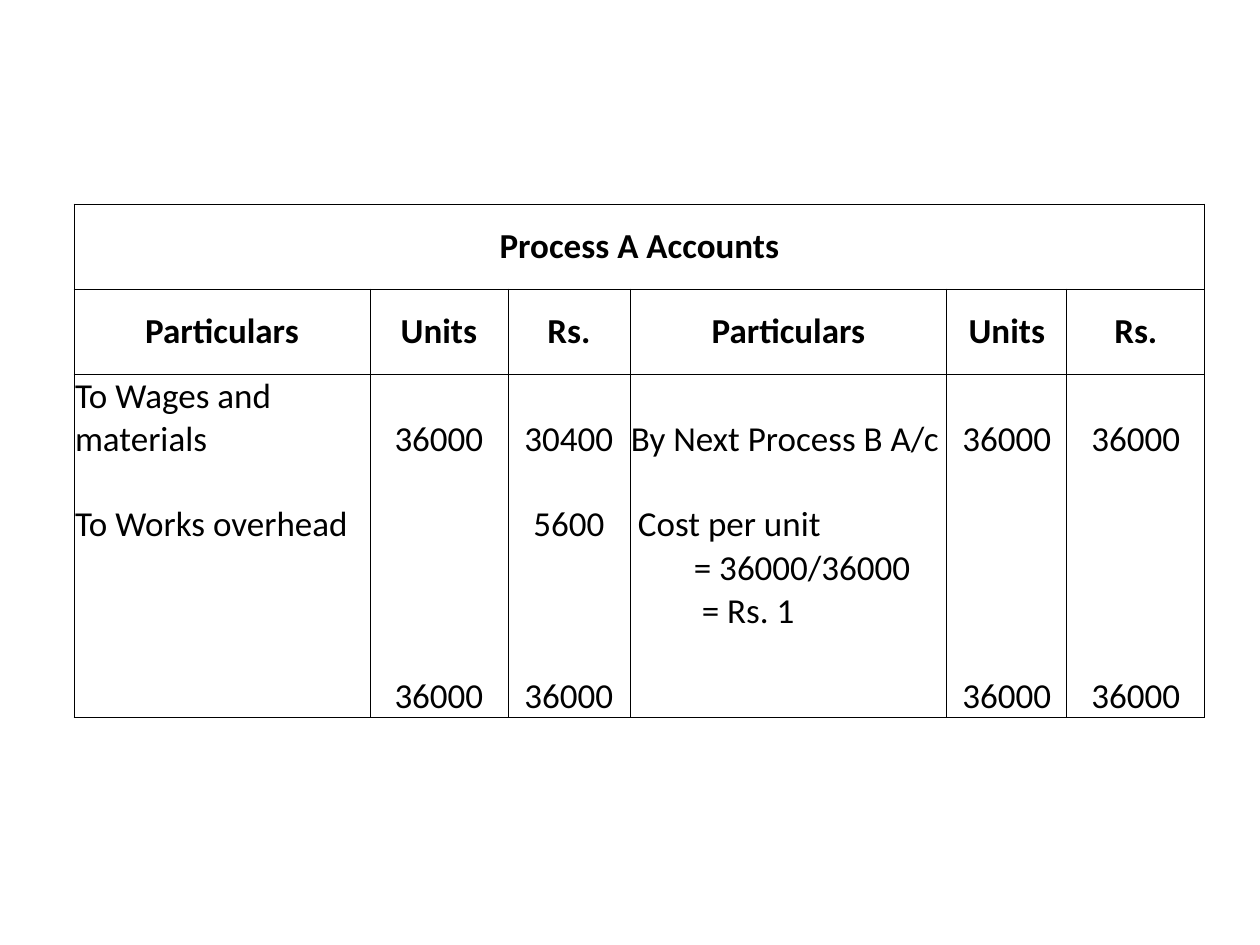
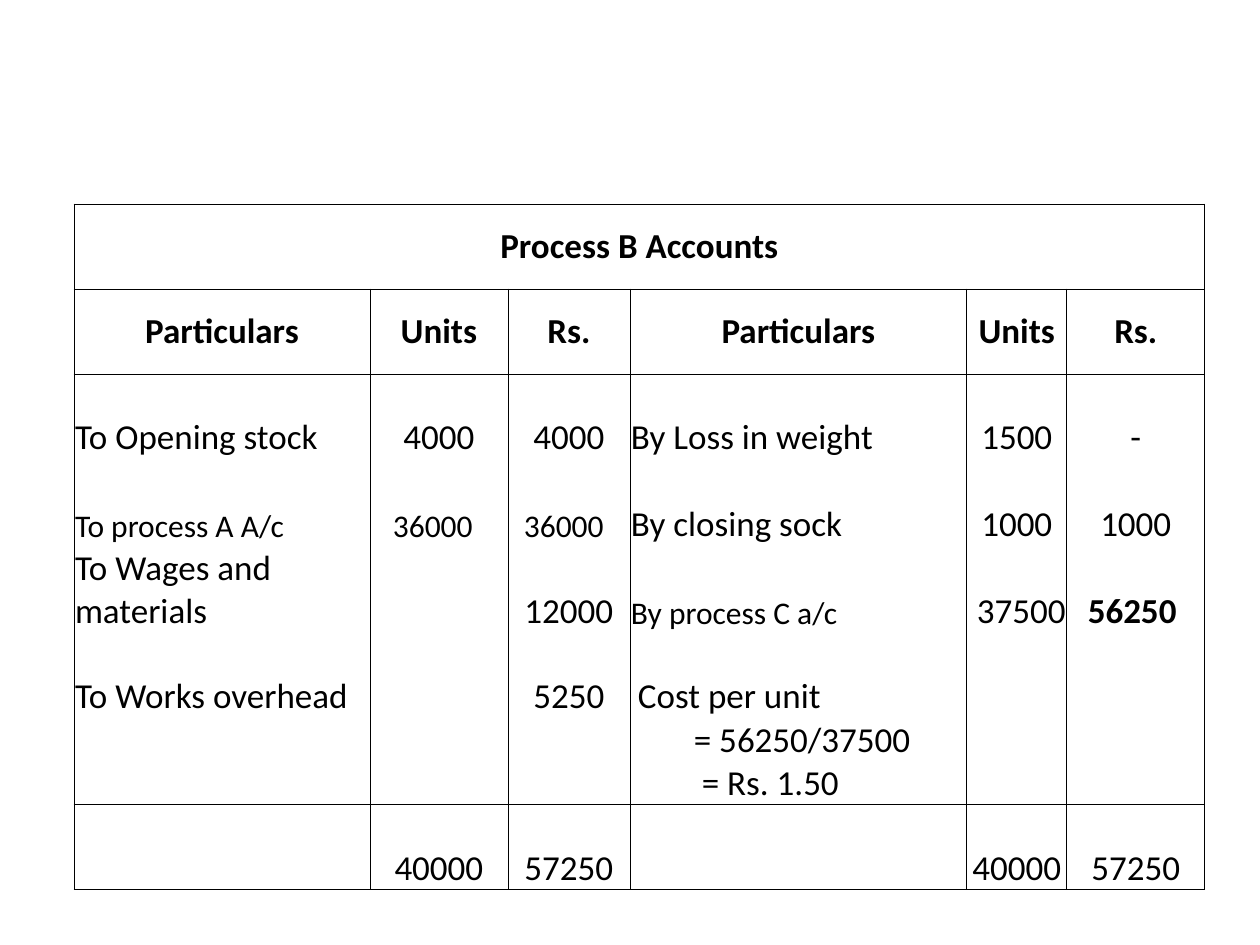
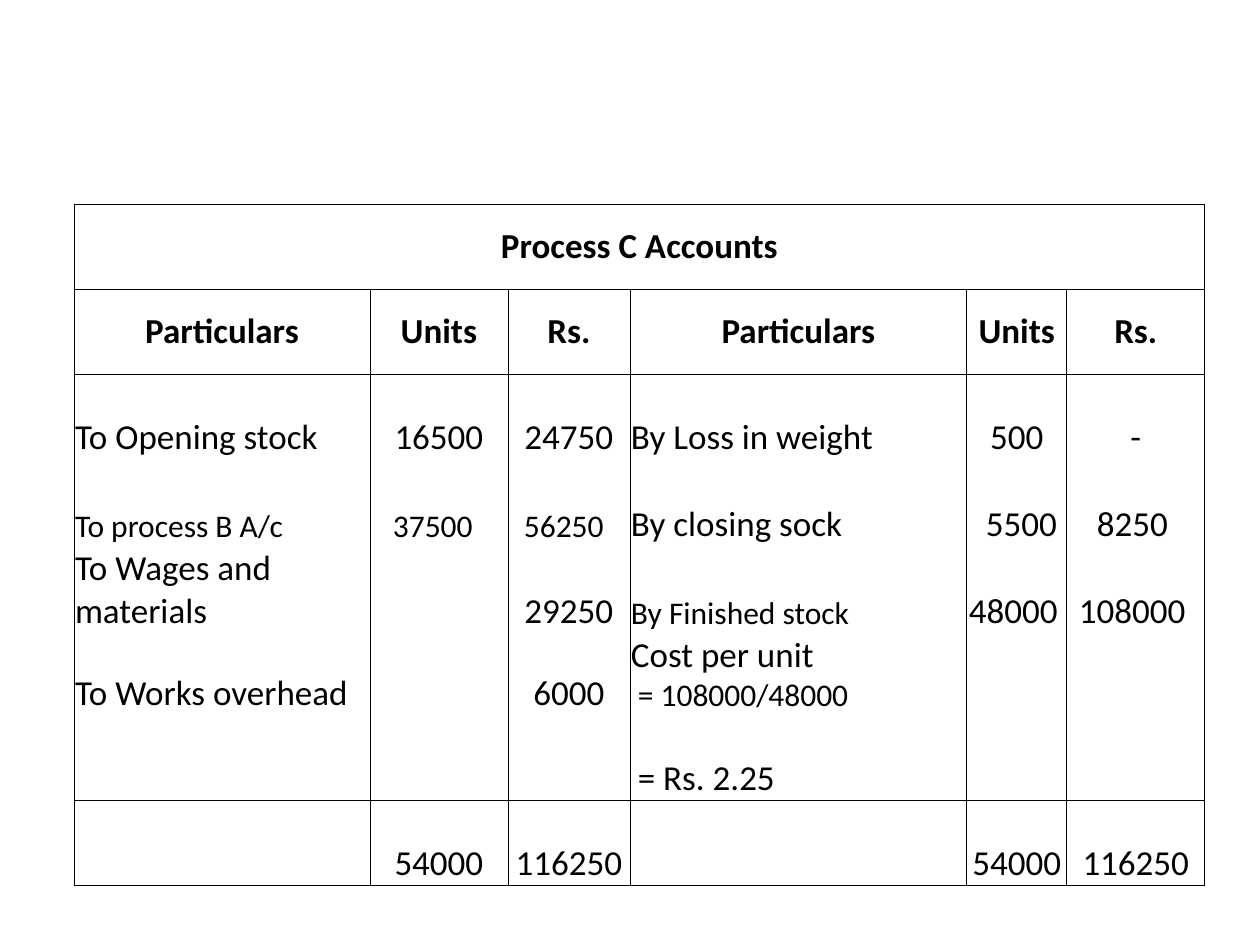
import collections

import pptx
import pptx.dml.color
import pptx.enum.text
import pptx.oxml
import pptx.oxml.ns
import pptx.util

Theme = collections.namedtuple("Theme", "ink paper font size small rule")
THEME = Theme(ink="000000", paper="FFFFFF", font="Calibri", size=20, small=18, rule=0.5)
Entry = collections.namedtuple("Entry", "text size indent bold", defaults=(THEME.size, None, False))
Ledger = collections.namedtuple("Ledger", "title widths heights rules entries")

HEADINGS = ["Particulars", "Units", "Rs."] * 2
PARTICULARS = (0, 3)
LEFT, TOP = 74, 204
HEADER_HEIGHTS = [85, 85]


def px(length):
    return pptx.util.Emu(round(length * 914400 / 126))


def draw_border(cell, side, visible):
    border = pptx.oxml.parse_xml(
        f'<a:{side} {pptx.oxml.ns.nsdecls("a")} w="{int(THEME.rule * 12700)}">'
        + (f'<a:solidFill><a:srgbClr val="{THEME.ink}"/></a:solidFill>' if visible else "<a:noFill/>")
        + f"</a:{side}>"
    )
    cell._tc.get_or_add_tcPr().append(border)


ledgers = [
    Ledger(
        "Process A Accounts",
        [296, 138, 122, 317, 120, 138],
        HEADER_HEIGHTS + [87, 85, 87, 85],
        {0, 1, 2, 6},
        [
            ["To Wages and materials", "36000", "30400", "By Next Process B A/c", "36000", "36000"],
            ["To Works overhead", "", "5600", Entry("Cost per unit", indent=7), "", ""],
            ["", "", "", [Entry("= 36000/36000", indent=63), Entry("= Rs. 1", indent=71)], "", ""],
            ["", "36000", "36000", "", "36000", "36000"],
        ],
    ),
    Ledger(
        "Process B Accounts",
        [296, 138, 122, 337, 100, 138],
        HEADER_HEIGHTS + [85, 87, 87, 85, 87, 85],
        {0, 1, 2, 7, 8},
        [
            ["To Opening stock", "4000", "4000", "By Loss in weight", "1500", "-"],
            [Entry("To process A A/c", THEME.small), Entry("36000", THEME.small, 22),
             Entry("36000", THEME.small, 15), "By closing sock", "1000", "1000"],
            ["To Wages and materials", "", "12000", Entry("By process C a/c", THEME.small),
             Entry("37500", indent=9), Entry("56250", indent=20, bold=True)],
            ["To Works overhead", "", "5250", Entry("Cost per unit", indent=7), "", ""],
            ["", "", "", [Entry("= 56250/37500", indent=63), Entry("= Rs. 1.50", indent=71)], "", ""],
            ["", "40000", "57250", "", "40000", "57250"],
        ],
    ),
    Ledger(
        "Process C Accounts",
        [296, 138, 122, 337, 100, 138],
        HEADER_HEIGHTS + [85, 87, 87, 82, 85, 85],
        {0, 1, 2, 7, 8},
        [
            ["To Opening stock", "16500", "24750", "By Loss in weight", "500", "-"],
            [Entry("To process B A/c", THEME.small), Entry("37500", THEME.small, 22),
             Entry("56250", THEME.small, 15), "By closing sock", Entry("5500", indent=18),
             Entry("8250", indent=29)],
            ["To Wages and materials", "", "29250", Entry("By Finished stock", THEME.small),
             Entry("48000", indent=1), Entry("108000", indent=11)],
            ["To Works overhead", "", "6000",
             [Entry("Cost per unit"), Entry("= 108000/48000", THEME.small, 7)], "", ""],
            ["", "", "", Entry("= Rs. 2.25", indent=7), "", ""],
            ["", "54000", "116250", "", "54000", "116250"],
        ],
    ),
]

deck = pptx.Presentation()
deck.slide_width, deck.slide_height = px(1260), px(945)

for ledger in ledgers:
    slide = deck.slides.add_slide(deck.slide_layouts[6])
    slide.background.fill.solid()
    slide.background.fill.fore_color.rgb = pptx.dml.color.RGBColor.from_string(THEME.paper)
    account = slide.shapes.add_table(
        len(ledger.heights), len(ledger.widths), px(LEFT), px(TOP),
        px(sum(ledger.widths)), px(sum(ledger.heights)),
    ).table
    account.first_row = account.horz_banding = False
    for column, width in zip(account.columns, ledger.widths):
        column.width = px(width)
    for row, height in zip(account.rows, ledger.heights):
        row.height = px(height)
    account.cell(0, 0).merge(account.cell(0, 5))

    for r, contents in enumerate([[ledger.title] + [""] * 5, HEADINGS] + ledger.entries):
        for c, content in enumerate(contents):
            cell = account.cell(r, c)
            is_header = r < 2
            draw_border(cell, "lnL", True)
            draw_border(cell, "lnR", True)
            draw_border(cell, "lnT", r in ledger.rules)
            draw_border(cell, "lnB", r + 1 in ledger.rules)
            cell.fill.background()
            cell.margin_left = cell.margin_right = cell.margin_top = px(1)
            cell.margin_bottom = 0
            anchor = pptx.enum.text.MSO_ANCHOR
            cell.vertical_anchor = anchor.MIDDLE if is_header else anchor.BOTTOM

            lines = content if isinstance(content, list) else [content]
            lines = [Entry(line) if isinstance(line, str) else line for line in lines]
            cell.text_frame.text = "\n".join(line.text for line in lines)
            for paragraph, line in zip(cell.text_frame.paragraphs, lines):
                if line.indent is not None:
                    paragraph._p.get_or_add_pPr().set("marL", str(px(line.indent)))
                elif is_header or c not in PARTICULARS:
                    paragraph.alignment = pptx.enum.text.PP_ALIGN.CENTER
                paragraph.font.size = pptx.util.Pt(line.size)
                for run in paragraph.runs:
                    run.font.name = THEME.font
                    run.font.size = pptx.util.Pt(line.size)
                    run.font.bold = is_header or line.bold
                    run.font.color.rgb = pptx.dml.color.RGBColor.from_string(THEME.ink)

deck.save("out.pptx")
